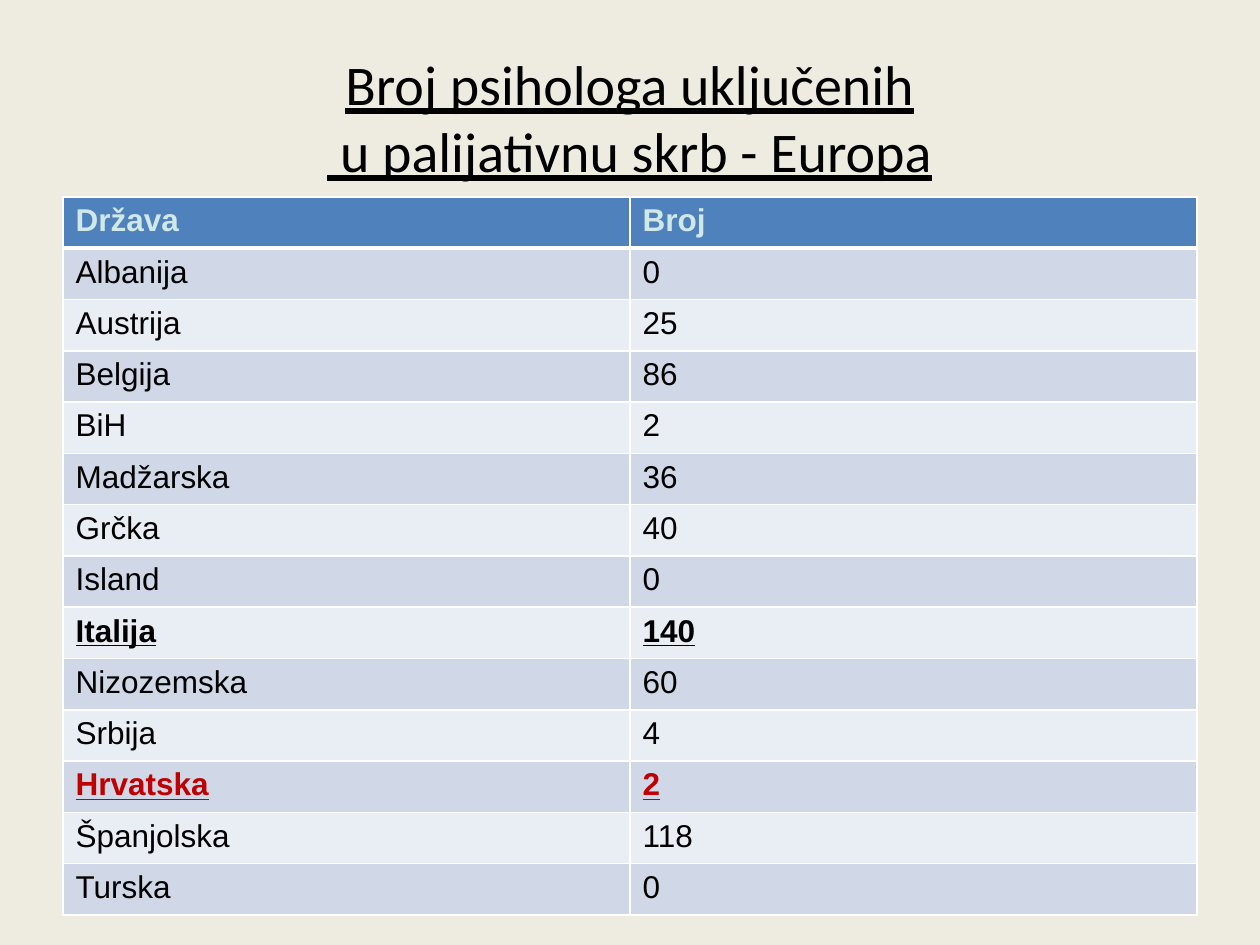
from lxml import etree
from pptx import Presentation, util as u
from pptx.dml.color import RGBColor
from pptx.enum import text
from pptx.oxml.ns import qn

# Content
TITLE_LINES = ("Broj psihologa uključenih", " u palijativnu skrb - Europa")
COUNTRIES = [
    ("Država", "Broj"),
    ("Albanija", "0"),
    ("Austrija", "25"),
    ("Belgija", "86"),
    ("BiH", "2"),
    ("Madžarska", "36"),
    ("Grčka", "40"),
    ("Island", "0"),
    ("Italija", "140"),
    ("Nizozemska", "60"),
    ("Srbija", "4"),
    ("Hrvatska", "2"),
    ("Španjolska", "118"),
    ("Turska", "0"),
]

THEME = {
    "background": "EEECE1",
    "header": "4F81BD",
    "bands": ("E9EDF4", "D0D8E8"),
    "border": "FFFFFF",
    "title": {"name": "Calibri", "size": u.Pt(32), "underline": True, "color": "000000"},
    "body": {"name": "Arial", "size": u.Pt(18), "bold": False, "color": "000000"},
}
HEADER_FONT = {**THEME["body"], "bold": True, "color": "D0E8E8"}
EMPHASIS = {
    "Italija": {"bold": True, "underline": True},
    "Hrvatska": {"bold": True, "underline": True, "color": "C00000"},
}

# Layout in points
MARGIN, CONTENT_WIDTH = 36, 648
TITLE_TOP, TITLE_HEIGHT = 21.6, 90
TABLE_TOP, TABLE_HEIGHT = 112.5, 410.4


def format_font(font, values):
    for key, value in values.items():
        if key == "color":
            font.color.rgb = RGBColor.from_string(value)
        else:
            setattr(font, key, value)


def add_border(cell, side, width):
    line = etree.SubElement(cell._tc.get_or_add_tcPr(), qn(f"a:ln{side}"), w=str(u.Pt(width)))
    fill = etree.SubElement(line, qn("a:solidFill"))
    etree.SubElement(fill, qn("a:srgbClr"), val=THEME["border"])


def add_title(slide):
    box = slide.shapes.add_textbox(
        u.Pt(MARGIN), u.Pt(TITLE_TOP), u.Pt(CONTENT_WIDTH), u.Pt(TITLE_HEIGHT))
    frame = box.text_frame
    frame.word_wrap = True
    frame.vertical_anchor = text.MSO_ANCHOR.MIDDLE
    heading = frame.paragraphs[0]
    heading.alignment = text.PP_ALIGN.CENTER
    for index, words in enumerate(TITLE_LINES):
        if index:
            heading.add_line_break()
        run = heading.add_run()
        run.text = words
        format_font(run.font, THEME["title"])


def add_country_table(slide):
    table = slide.shapes.add_table(
        len(COUNTRIES), len(COUNTRIES[0]), u.Pt(MARGIN), u.Pt(TABLE_TOP),
        u.Pt(CONTENT_WIDTH), u.Pt(TABLE_HEIGHT)).table
    for row, entry in enumerate(COUNTRIES):
        if row == 0:
            fill, font = THEME["header"], HEADER_FONT
        else:
            fill = THEME["bands"][row % 2]
            font = {**THEME["body"], **EMPHASIS.get(entry[0], {})}
        # The rule below the header is thicker than the others
        widths = {"L": 1, "R": 1, "T": 3 if row == 1 else 1, "B": 3 if row == 0 else 1}
        for column, words in enumerate(entry):
            cell = table.cell(row, column)
            for side, width in widths.items():
                add_border(cell, side, width)
            cell.fill.solid()
            cell.fill.fore_color.rgb = RGBColor.from_string(fill)
            run = cell.text_frame.paragraphs[0].add_run()
            run.text = words
            format_font(run.font, font)


def main():
    deck = Presentation()
    deck.slide_width, deck.slide_height = u.Pt(720), u.Pt(540)
    slide = deck.slides.add_slide(deck.slide_layouts[6])
    slide.background.fill.solid()
    slide.background.fill.fore_color.rgb = RGBColor.from_string(THEME["background"])
    add_title(slide)
    add_country_table(slide)
    deck.save("out.pptx")


if __name__ == "__main__":
    main()
